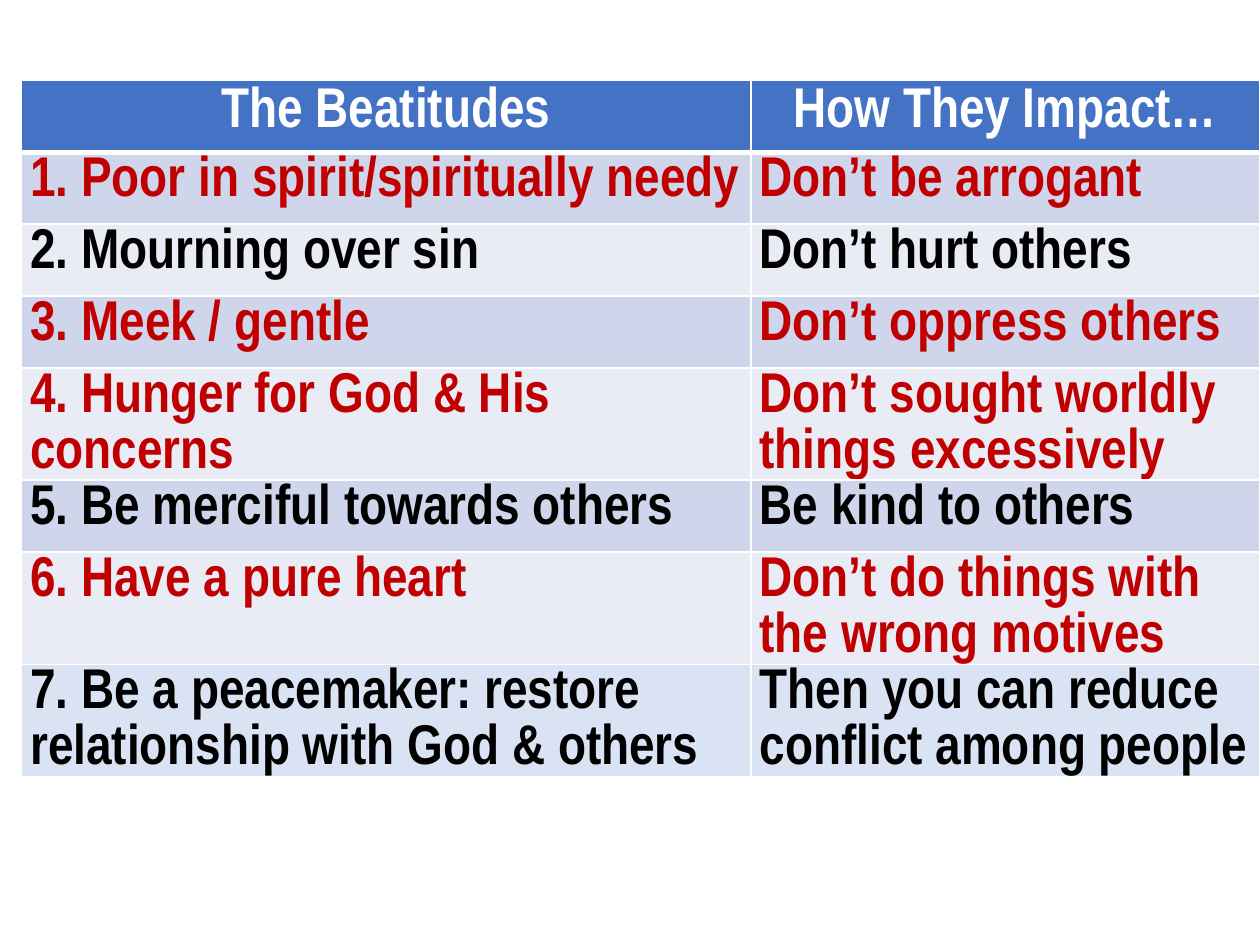
from lxml import etree
from pptx import Presentation
from pptx.dml.color import RGBColor
from pptx.enum.text import PP_ALIGN
from pptx.oxml.ns import qn
from pptx.util import Inches, Pt

CENTER, LEFT = PP_ALIGN.CENTER, PP_ALIGN.LEFT
FONT = "Arial Narrow"
WHITE, BLACK, RED = "FFFFFF", "000000", "C00000"
BLUE, DARK, LIGHT, LAST = "4472C4", "CFD5EA", "E9EBF5", "DAE3F3"

HEADS = ["The Beatitudes", "How They Impact…"]
ROWS = [
    (RED, "1. Poor in spirit/spiritually needy", "Don’t be arrogant"),
    (BLACK, "2. Mourning over sin", "Don’t hurt others"),
    (RED, "3. Meek / gentle", "Don’t oppress others"),
    (RED, "4. Hunger for God & His concerns",
     "Don’t sought worldly things excessively"),
    (BLACK, "5. Be merciful towards others", "Be kind to others"),
    (RED, "6. Have a pure heart", "Don’t do things with the wrong motives"),
    (BLACK, "7. Be a peacemaker: restore relationship with God & others",
     "Then you can reduce conflict among people"),
]


def rgb(code):
    return RGBColor.from_string(code)


def write(frame, text, color=BLACK, size=32, align=LEFT, space=None):
    para = frame.paragraphs[0]
    para.alignment = align
    para.line_spacing = space
    run = para.add_run()
    run.text = text
    font = run.font
    font.name, font.size, font.bold = FONT, Pt(size), True
    font.color.rgb = rgb(color)


def edge(cell, **widths):
    """Draw white borders; widths in points are keyed L, R, T, B in that order."""
    props = cell._tc.get_or_add_tcPr()
    for spot, (side, width) in enumerate(widths.items()):
        line = etree.Element(qn(f"a:ln{side}"), w=str(Pt(width)))
        fill = etree.SubElement(line, qn("a:solidFill"))
        etree.SubElement(fill, qn("a:srgbClr"), val=WHITE)
        props.insert(spot, line)


def paint(cell, color):
    cell.fill.solid()
    cell.fill.fore_color.rgb = rgb(color)


def add_grid(slide, left, top, widths, height):
    """Place the table; height is that of one row."""
    count = len(ROWS) + 1
    table = slide.shapes.add_table(
        count, len(widths), Inches(left), Inches(top),
        Inches(sum(widths)), Inches(height * count)).table
    for col, width in zip(table.columns, widths):
        col.width = Inches(width)
    for row in table.rows:
        row.height = Inches(height)

    for col, head in enumerate(HEADS):
        cell = table.cell(0, col)
        paint(cell, BLUE)
        edge(cell, L=1, R=1, T=1, B=3)
        write(cell.text_frame, head, color=WHITE, align=CENTER)

    for row, (color, *texts) in enumerate(ROWS, 1):
        band = LAST if row == len(ROWS) else DARK if row % 2 else LIGHT
        for col, text in enumerate(texts):
            cell = table.cell(row, col)
            cell.margin_left = cell.margin_right = Inches(0.07)
            cell.margin_top = cell.margin_bottom = 0
            paint(cell, band)
            edge(cell, L=1, R=1, T=3 if row == 1 else 1, B=1)
            write(cell.text_frame, text, color=color, space=1.07)


def main():
    deck = Presentation()
    deck.slide_width, deck.slide_height = Inches(10), Inches(7.5)
    slide = deck.slides.add_slide(deck.slide_layouts[6])
    add_grid(slide, left=0.17, top=0.64, widths=[5.79, 4.04], height=0.57)
    deck.save("out.pptx")


if __name__ == "__main__":
    main()
